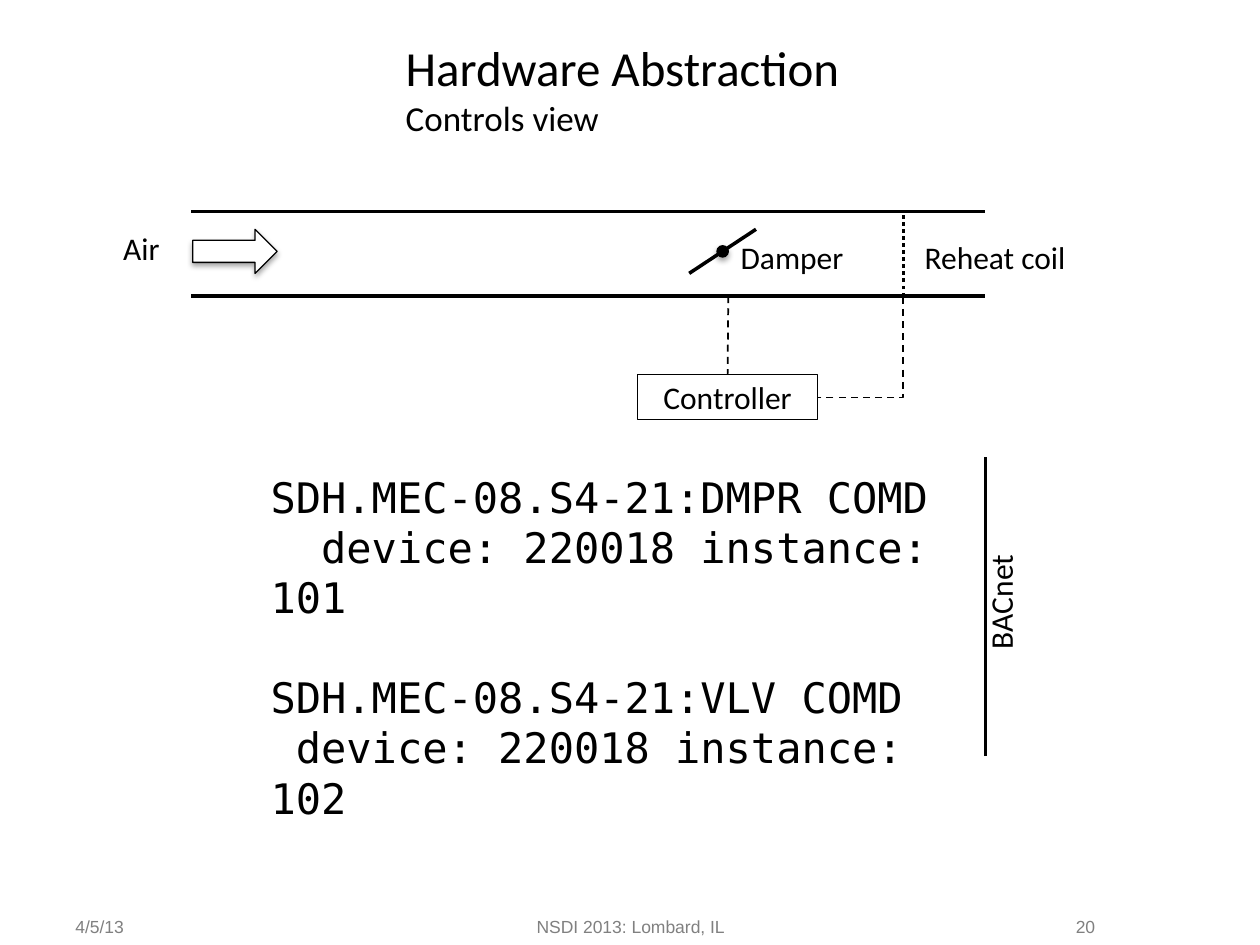
from lxml import etree
from pptx import Presentation
from pptx.dml.color import RGBColor as rgb
from pptx.enum import dml, shapes, text
from pptx.oxml import ns

PX = 9144  # 100 px to the inch
PT = 12700
BLACK, GREY, WHITE = "000000", "808080", "FFFFFF"
LEFT, MID, RIGHT = text.PP_ALIGN.LEFT, text.PP_ALIGN.CENTER, text.PP_ALIGN.RIGHT
TOP, HALF = text.MSO_ANCHOR.TOP, text.MSO_ANCHOR.MIDDLE


def color(val):
    return rgb.from_string(val)


def write(shape, rows, font="Calibri", tint=BLACK, align=LEFT, anchor=TOP, wrap=False):
    """Fill a shape with rows of (words, size, space before)."""
    frame = shape.text_frame
    look = {"word_wrap": wrap, "vertical_anchor": anchor,
            "auto_size": text.MSO_AUTO_SIZE.NONE}
    for name, val in look.items():
        setattr(frame, name, val)
    for i, (words, size, gap) in enumerate(rows):
        para = frame.add_paragraph() if i else frame.paragraphs[0]
        para.alignment = align
        para.space_before = gap * PT
        run = para.add_run()
        run.text = words
        for name, val in {"name": font, "size": size * PT}.items():
            setattr(run.font, name, val)
        run.font.color.rgb = color(tint)


prs = Presentation()
prs.slide_width, prs.slide_height = 1000 * PX, 750 * PX
slide = prs.slides.add_slide(prs.slide_layouts[5])
tree = slide.shapes

# Title
title = tree.title
for name, val in {"left": 312, "top": 25, "width": 371, "height": 91}.items():
    setattr(title, name, val * PX)
write(title, [("Hardware Abstraction", 28, 0), ("Controls view", 20, 0)])

# Footer
for words, x, wide, align in [("4/5/13", 50, 233, LEFT),
                              ("NSDI 2013: Lombard, IL", 342, 317, MID),
                              ("20", 717, 162, RIGHT)]:
    box = tree.add_textbox(x * PX, 725 * PX, wide * PX, 20 * PX)
    write(box, [(words, 10, 0)], "Arial", GREY, align, HALF, True)

# Point names, a line of space between the two
code = tree.add_textbox(205 * PX, 369 * PX, 553 * PX, 212 * PX)
write(code, [("SDH.MEC-08.S4-21:DMPR COMD", 24, 0),
             ("  device: 220018 instance: 101", 24, 0),
             ("SDH.MEC-08.S4-21:VLV COMD", 24, 28),
             (" device: 220018 instance: 102", 24, 0)],
      "DejaVu Sans Mono", wrap=True)

# Controller, air arrow and damper pivot
kinds = shapes.MSO_SHAPE
parts = {}
for key, kind, x, y, wide, high, fill in [
        ("box", kinds.RECTANGLE, 506, 297, 143, 36, None),
        ("air", kinds.RIGHT_ARROW, 153, 182, 67, 35, WHITE),
        ("pivot", kinds.OVAL, 569, 195, 9, 9, BLACK)]:
    part = tree.add_shape(kind, x * PX, y * PX, wide * PX, high * PX)
    part.shadow.inherit = False
    part.line.color.rgb = color(BLACK)
    part.line.width = int(0.75 * PT)
    if fill:
        part.fill.solid()
        part.fill.fore_color.rgb = color(fill)
        # Soft shadow straight below
        glow = etree.SubElement(
            part.element.spPr.find(ns.qn("a:effectLst")), ns.qn("a:outerShdw"),
            blurRad="40000", dist="23000", dir="5400000", rotWithShape="0")
        ink = etree.SubElement(glow, ns.qn("a:srgbClr"), val=BLACK)
        etree.SubElement(ink, ns.qn("a:alpha"), val="35000")
    else:
        part.fill.background()
    parts[key] = part
write(parts["box"], [("Controller", 18, 0)], align=MID, anchor=HALF)

# Duct walls, damper, coil, bus and control wires
dot, dash = dml.MSO_LINE.ROUND_DOT, dml.MSO_LINE.DASH
line, bent = shapes.MSO_CONNECTOR.STRAIGHT, shapes.MSO_CONNECTOR.ELBOW
wires = {}
for key, kind, x, y, x2, y2, wide, style in [
        ("roof", line, 152, 168, 782, 168, 2, None),
        ("floor", line, 152, 235, 782, 235, 2, None),
        ("damper", line, 547, 217, 600, 182, 2, None),
        ("coil", line, 717, 235, 717, 168, 2, dot),
        ("bus", line, 782, 600, 782, 363, 2, None),
        ("drop", line, 578, 235, 578, 297, 1, dash),
        ("bend", bent, 643, 242, 723, 309, 1, dash)]:
    wire = tree.add_connector(kind, x * PX, y * PX, x2 * PX, y2 * PX)
    etree.SubElement(wire.element.spPr, ns.qn("a:effectLst"))
    wire.line.color.rgb = color(BLACK)
    wire.line.width = wide * PT
    if style:
        wire.line.dash_style = style
    wires[key] = wire
wires["drop"].end_connect(parts["box"], 0)

# One corner only, turned to run down and then left
shape = wires["bend"].element.spPr
shape.find(ns.qn("a:xfrm")).set("rot", "5400000")
shape.find(ns.qn("a:prstGeom")).set("prst", "bentConnector2")

# Labels
for words, x, y, wide, turn in [("Air", 88, 177, 50, 0),
                                ("Damper", 578, 184, 103, 0),
                                ("Reheat coil", 724, 184, 134, 0),
                                ("BACnet", 746, 457, 96, 270)]:
    label = tree.add_textbox(x * PX, y * PX, wide * PX, 40 * PX)
    label.rotation = turn
    write(label, [(words, 18, 0)])

prs.save("out.pptx")
